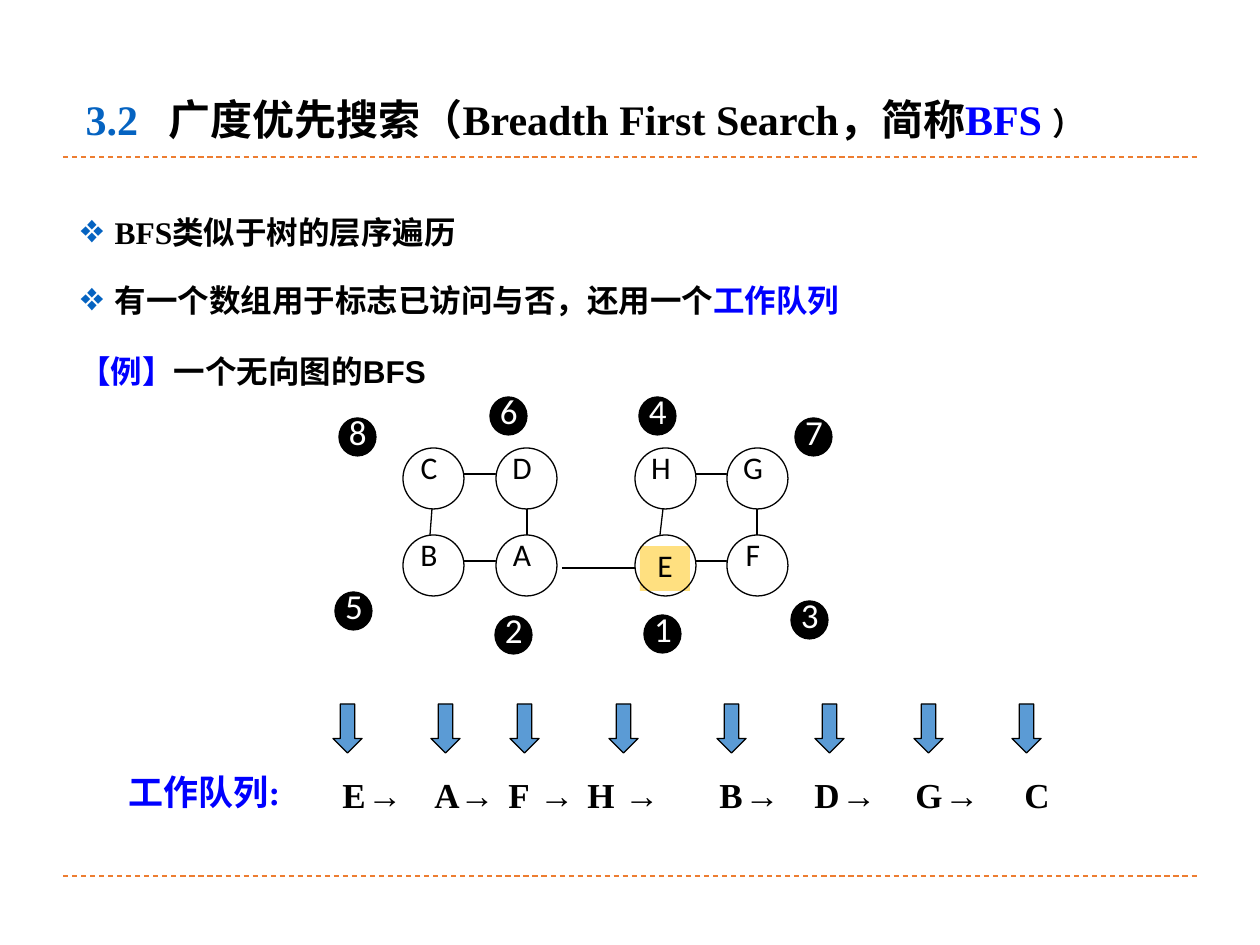
import pptx
import pptx.util
from lxml import etree
from pptx.dml.color import RGBColor
from pptx.enum.dml import MSO_LINE
from pptx.enum.shapes import MSO_CONNECTOR, MSO_SHAPE
from pptx.enum.text import MSO_ANCHOR, MSO_AUTO_SIZE, PP_ALIGN
from pptx.oxml.ns import qn

SCALE = 914400 / 126  # EMU per px
BLACK, WHITE, BLUE, LINK = "000000", "FFFFFF", "0000FF", "0563C1"
SERIF, SANS, MONO, LABEL = "Times New Roman", "Arial", "Courier New", "Calibri"

# Content: runs are (text, colour, font, size)
TITLE = [("3.2\t", LINK, SERIF, 24),
         ("广度优先搜索（Breadth First Search，简称", BLACK, SERIF, 24),
         ("BFS ", BLUE, SERIF, 24), ("）", BLACK, SERIF, 18)]
POINTS = [[("BFS类似于树的层序遍历", BLACK, SERIF, 18)],
          [("有一个数组用于标志已访问与否，还用一个", BLACK, SERIF, 18),
           ("工作队列", BLUE, SERIF, 18)]]
EXAMPLE = [("【例】", BLUE, SANS, 18), ("一个无向图的BFS", BLACK, SANS, 18)]
START = "E"
GRID = ["CDHG", "BAEF"]
BADGES = [("1", 644, 615), ("2", 495, 616), ("5", 335, 592), ("8", 339, 418),
          ("6", 490, 397), ("3", 791, 601), ("7", 795, 418), ("4", 639, 397)]
# Queue parts: text, left, width, tab stops
QUEUE = [("E →", 330, 101, []),
         ("A →\tF\t→\tH\t→", 422, 286, [74, 112, 153, 197]),
         ("B →\tD →", 707, 207, [95]),
         ("G →", 903, 90, []),
         ("C", 1012, 50, [])]
ARROWS = [333, 431, 510, 609, 717, 815, 914, 1012]

# Graph geometry
COLS, ROWS = [403, 496, 635, 727], [448, 535]
SIZE = 61
EDGES = [(x + SIZE, y + 26, nxt, y + 26)
         for x, nxt in (COLS[:2], COLS[2:]) for y in ROWS]
EDGES += [(a, ROWS[0] + SIZE, b, ROWS[1])
          for a, b in ((432, 430), (527, 527), (663, 660), (757, 757))]
EDGES += [(562, 568, 635, 568)]


def px(num):
    return pptx.util.Emu(round(num * SCALE))


def color(code):
    return RGBColor.from_string(code)


def place(shape, box):
    shape.left, shape.top, shape.width, shape.height = map(px, box)


def setup(frame, inset=True):
    frame.word_wrap = True
    frame.auto_size = MSO_AUTO_SIZE.NONE
    frame.vertical_anchor = MSO_ANCHOR.TOP
    if not inset:
        frame.margin_left = frame.margin_right = 0
        frame.margin_top = frame.margin_bottom = 0


def write(para, runs, bold=True, align=PP_ALIGN.LEFT, tabs=()):
    para.alignment = align
    if tabs:
        stops = etree.SubElement(para._p.get_or_add_pPr(), qn("a:tabLst"))
        for stop in tabs:
            etree.SubElement(stops, qn("a:tab"), pos=str(px(stop)), algn="l")
    for text, tint, face, size in runs:
        run = para.add_run()
        run.text = text
        run.font.name, run.font.size = face, pptx.util.Pt(size)
        run.font.bold = bold
        run.font.color.rgb = color(tint)


def bullet(para, indent):
    props = para._p.get_or_add_pPr()
    props.set("marL", str(px(indent)))
    props.set("indent", str(-px(indent)))
    tint = etree.SubElement(props, qn("a:buClr"))
    etree.SubElement(tint, qn("a:srgbClr"), val=LINK)
    etree.SubElement(props, qn("a:buFont"), typeface=SERIF)
    etree.SubElement(props, qn("a:buChar"), char="❖")


def add_text(slide, box, runs, inset=True, fill=None, **style):
    shape = slide.shapes.add_textbox(*map(px, box))
    setup(shape.text_frame, inset)
    if fill:
        shape.fill.solid()
        shape.fill.fore_color.rgb = color(fill)
    write(shape.text_frame.paragraphs[0], runs, **style)


def add_form(slide, kind, box, fill=None):
    shape = slide.shapes.add_shape(kind, *map(px, box))
    shape.shadow.inherit = False
    if fill:
        shape.fill.solid()
        shape.fill.fore_color.rgb = color(fill)
    else:
        shape.fill.background()
    shape.line.color.rgb = color(BLACK)
    shape.line.width = pptx.util.Pt(0.75)


def add_line(slide, ends, tint=BLACK, dash=None):
    line = slide.shapes.add_connector(MSO_CONNECTOR.STRAIGHT, *map(px, ends))
    line.line.color.rgb = color(tint)
    line.line.width = pptx.util.Pt(0.75)
    if dash:
        line.line.dash_style = dash
    etree.SubElement(line._element.spPr, qn("a:effectLst"))


def main():
    deck = pptx.Presentation()
    deck.slide_width, deck.slide_height = px(1260), px(945)
    slide = deck.slides.add_slide(deck.slide_layouts[1])

    # Rules under the title and above the foot
    for y in (876, 157):
        add_line(slide, (63, y, 1197, y), "ED7D31", MSO_LINE.DASH)

    # Title
    title = slide.shapes.title
    place(title, (73, 87, 1102, 63))
    setup(title.text_frame)
    write(title.text_frame.paragraphs[0], TITLE, tabs=[83])

    # Bullet list
    body = slide.placeholders[1]
    place(body, (67, 199, 1102, 130))
    setup(body.text_frame)
    for i, runs in enumerate(POINTS):
        para = body.text_frame.add_paragraph() if i else body.text_frame.paragraphs[0]
        para.line_spacing = pptx.util.Pt(26)
        para.space_before = pptx.util.Pt(13 if i else 0)
        bullet(para, 35)
        write(para, runs)

    # Graph
    for ends in EDGES:
        add_line(slide, ends)
    for y, names in zip(ROWS, GRID):
        for x, name in zip(COLS, names):
            first = name == START
            box = (x + 5, y + 11, 50, 45) if first else (x, y, 52, 45)
            add_text(slide, box, [(name, BLACK, LABEL, 18)], inset=False,
                     fill="FFE080" if first else WHITE, bold=False,
                     align=PP_ALIGN.CENTER)
            add_form(slide, MSO_SHAPE.OVAL, (x, y, SIZE, SIZE))
    add_text(slide, (67, 346, 640, 50), EXAMPLE)

    # Visiting order
    for num, x, y in BADGES:
        add_form(slide, MSO_SHAPE.OVAL, (x, y, 37, 38), BLACK)
        add_text(slide, (x + 10, y - 8, 32, 47), [(num, WHITE, LABEL, 20)],
                 inset=False, bold=False, align=PP_ALIGN.JUSTIFY)

    # Work queue
    add_text(slide, (116, 764, 200, 55), [("工作队列:", BLUE, SERIF, 20)])
    for text, x, width, tabs in QUEUE:
        runs = [(c, BLACK, MONO if c == "→" else SERIF, 20) for c in text]
        add_text(slide, (x, 767, width, 55), runs, tabs=tabs)
    for x in ARROWS:
        add_form(slide, MSO_SHAPE.DOWN_ARROW, (x, 704, 29, 49), "5B9BD5")

    deck.save("out.pptx")


if __name__ == "__main__":
    main()
